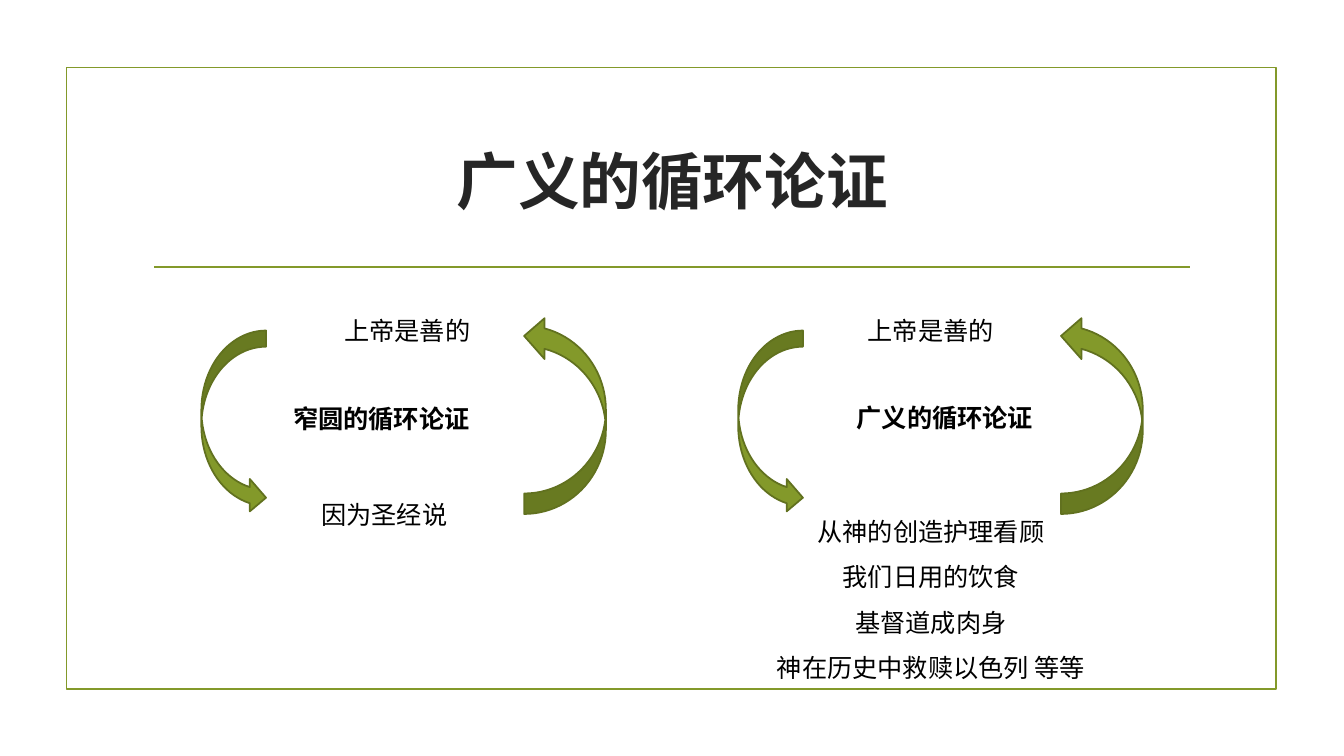
from lxml import etree
from pptx import Presentation
from pptx.dml.color import RGBColor
from pptx.enum.shapes import MSO_CONNECTOR, MSO_SHAPE
from pptx.enum.text import MSO_ANCHOR, PP_ALIGN
from pptx.oxml.ns import qn
from pptx.util import Cm, Pt

THEME = {
    "font": "Times New Roman",
    "green": RGBColor(0x83, 0x99, 0x2A),
    "dark_green": RGBColor(0x61, 0x71, 0x1F),
    "title_color": RGBColor(0x26, 0x26, 0x26),
    "text_color": RGBColor(0, 0, 0),
    "title_size": Pt(44),
    "text_size": Pt(18),
    "line_width": Pt(1.25),
}

# Content: each text has its lines and its box (left, top, width, height) in cm
TITLE = "广义的循环论证"
TITLE_BOX = (3.61, 2.72, 26.67, 3.63)
CYCLES = [
    {
        "claim": (["上帝是善的"], (8.43, 7.82, 3.71, 1.02)),
        "label": (["窄圆的循环论证"], (7.14, 10.03, 5.4, 1.02)),
        "basis": (["因为圣经说"], (7.85, 12.45, 3.71, 1.02)),
    },
    {
        "claim": (["上帝是善的"], (21.62, 7.82, 3.71, 1.02)),
        "label": (["广义的循环论证"], (21.34, 10.01, 5.4, 1.02)),
        "basis": (
            ["从神的创造护理看顾", "我们日用的饮食", "基督道成肉身", "神在历史中救赎以色列 等等"],
            (19.28, 12.5, 8.36, 4.75),
        ),
    },
]

# Arrows of the first cycle: preset, centre, size before turning, rotation, flip
ARROWS = [
    (MSO_SHAPE.CURVED_DOWN_ARROW, (5.89, 10.64), (4.62, 1.63), 90, True),
    (MSO_SHAPE.CURVED_UP_ARROW, (14.24, 10.45), (5.0, 2.06), 270, False),
]
CYCLE_STEP = 13.53

presentation = Presentation()
presentation.slide_width, presentation.slide_height = Cm(33.87), Cm(19.05)
slide = presentation.slides.add_slide(presentation.slide_layouts[6])


def lengths(box):
    return [Cm(value) for value in box]


def add_text(lines, box, size=THEME["text_size"], color=THEME["text_color"],
             bold=False, wrap=False, align=PP_ALIGN.LEFT, spacing=None,
             anchor=MSO_ANCHOR.TOP):
    frame = slide.shapes.add_textbox(*lengths(box)).text_frame
    frame.word_wrap = wrap
    frame.vertical_anchor = anchor
    frame.text = "\n".join(lines)
    for paragraph in frame.paragraphs:
        paragraph.alignment = align
        paragraph.line_spacing = spacing
        paragraph.font.name = THEME["font"]
        paragraph.font.size = size
        paragraph.font.bold = bold
        paragraph.font.color.rgb = color


def add_arrow(preset, centre, size, rotation, flipped, shift):
    left = centre[0] + shift - size[0] / 2
    top = centre[1] - size[1] / 2
    arrow = slide.shapes.add_shape(preset, *lengths((left, top, *size)))
    arrow.shadow.inherit = False
    arrow.rotation = rotation
    if flipped:
        arrow._element.spPr.find(qn("a:xfrm")).set("flipV", "1")
    arrow.fill.solid()
    arrow.fill.fore_color.rgb = THEME["green"]
    arrow.line.color.rgb = THEME["dark_green"]
    arrow.line.width = THEME["line_width"]


# Border and rule under the title
border = slide.shapes.add_shape(MSO_SHAPE.RECTANGLE, *lengths((1.68, 1.7, 30.48, 15.67)))
border.shadow.inherit = False
border.fill.background()
rule = slide.shapes.add_connector(
    MSO_CONNECTOR.STRAIGHT, *lengths((3.89, 6.73, 30, 6.73)))
etree.SubElement(rule._element.spPr, qn("a:effectLst"))
for outlined in (border, rule):
    outlined.line.color.rgb = THEME["green"]
    outlined.line.width = THEME["line_width"]

# Title
add_text([TITLE], TITLE_BOX, THEME["title_size"], THEME["title_color"], bold=True,
         wrap=True, align=PP_ALIGN.CENTER, anchor=MSO_ANCHOR.MIDDLE)

# Cycles: two arrows around a claim, a label and its basis
for index, cycle in enumerate(CYCLES):
    for arrow_data in ARROWS:
        add_arrow(*arrow_data, shift=index * CYCLE_STEP)
    add_text(*cycle["claim"])
    add_text(*cycle["label"], bold=True, wrap=True)
    several = len(cycle["basis"][0]) > 1
    add_text(*cycle["basis"],
             align=PP_ALIGN.CENTER if several else PP_ALIGN.LEFT,
             spacing=1.5 if several else None)

presentation.save("out.pptx")
